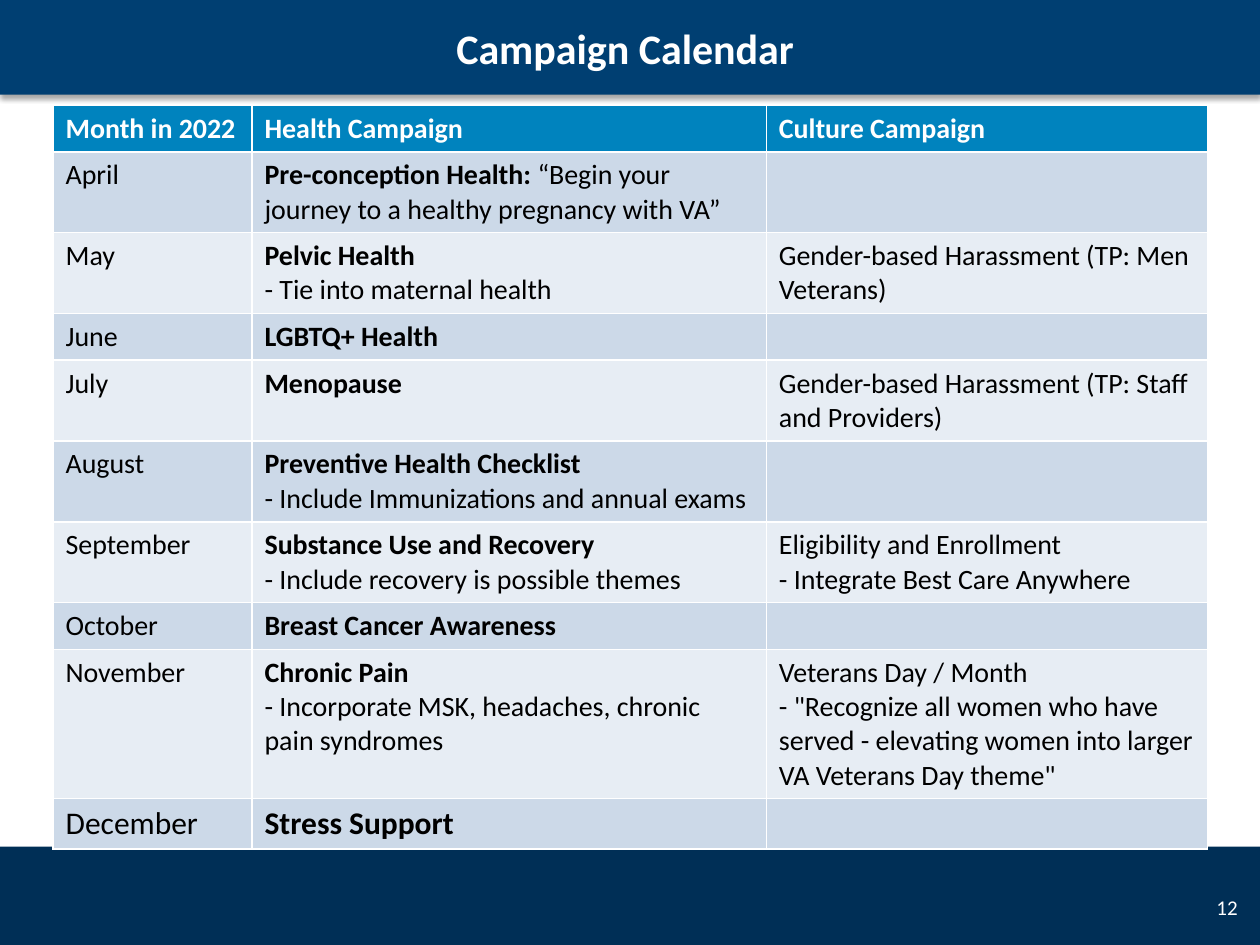
from lxml import etree
from pptx import Presentation
from pptx.dml.color import RGBColor
from pptx.enum.shapes import MSO_SHAPE
from pptx.enum.text import MSO_ANCHOR, PP_ALIGN
from pptx.oxml.ns import qn
from pptx.util import Cm, Pt

RECTANGLE = MSO_SHAPE.RECTANGLE
MIDDLE = MSO_ANCHOR.MIDDLE
CENTER, RIGHT = PP_ALIGN.CENTER, PP_ALIGN.RIGHT

FONT = "Calibri"
COLORS = {
    "title_bar": "003F72",
    "footer": "002F56",
    "header": "0083BE",
    "odd_row": "CCD9E8",
    "even_row": "E7EDF4",
    "white": "FFFFFF",
    "black": "000000",
}

PAGE_WIDTH, PAGE_HEIGHT = 25.4, 19.05
BAR_HEIGHT = 1.91
FOOTER_TOP = 17.07
COLUMN_WIDTHS = [4.01, 10.37, 8.89]
LINE_HEIGHT, CELL_PADDING = 0.69, 0.25

HEADINGS = ["Month in 2022", "Health Campaign", "Culture Campaign"]
# Month, bold campaign name, text after the name on its line,
# note on the next line, culture paragraphs, number of text lines
CAMPAIGNS = [
    ("April", "Pre-conception Health: ",
     "“Begin your journey to a healthy pregnancy with VA”", "", [], 2),
    ("May", "Pelvic Health", "", "- Tie into maternal health",
     ["Gender-based Harassment (TP: Men Veterans)"], 2),
    ("June", "LGBTQ+ Health", "", "", [], 1),
    ("July", "Menopause", "", "",
     ["Gender-based Harassment (TP: Staff and Providers)"], 2),
    ("August", "Preventive Health Checklist", "",
     "- Include Immunizations and annual exams", [], 2),
    ("September", "Substance Use and Recovery", "",
     "- Include recovery is possible themes",
     ["Eligibility and Enrollment", "- Integrate Best Care Anywhere"], 2),
    ("October", "Breast Cancer Awareness", "", "", [], 1),
    ("November", "Chronic Pain", "",
     "- Incorporate MSK, headaches, chronic pain syndromes",
     ["Veterans Day / Month",
      '- "Recognize all women who have served - elevating women into larger '
      'VA Veterans Day theme"'], 4),
    ("December", "Stress Support", "", "", [], 1),
]


def rgb(name):
    return RGBColor.from_string(COLORS[name])


def add_span(para, text, size, color, bold=False):
    span = para.add_run()
    span.text = text
    span.font.name = FONT
    span.font.size = Pt(size)
    span.font.bold = bold
    span.font.color.rgb = rgb(color)


def add_bar(page, top, height, color):
    bar = page.shapes.add_shape(RECTANGLE, 0, Cm(top), Cm(PAGE_WIDTH), Cm(height))
    bar.fill.solid()
    bar.fill.fore_color.rgb = rgb(color)
    bar.line.fill.background()
    bar.shadow.inherit = False
    return bar


def add_drop_shadow(shape):
    effects = shape._element.spPr.find(qn("a:effectLst"))
    shadow = etree.SubElement(
        effects, qn("a:outerShdw"), blurRad=str(Pt(3.1)), dist=str(Pt(1.8)),
        dir="5400000", algn="t", rotWithShape="0")
    color = etree.SubElement(shadow, qn("a:srgbClr"), val=COLORS["black"])
    etree.SubElement(color, qn("a:alpha"), val="35000")


def add_label(page, left, top, width, height, text, size, align, bold=False):
    box = page.shapes.add_textbox(Cm(left), Cm(top), Cm(width), Cm(height))
    box.text_frame.word_wrap = True
    box.text_frame.vertical_anchor = MIDDLE
    para = box.text_frame.paragraphs[0]
    para.alignment = align
    add_span(para, text, size, "white", bold)


def fill_cell(cell, fill, paragraphs, size, color="black"):
    """Write paragraphs, each a list of (text, bold) pairs, on a plain fill."""
    cell.fill.solid()
    cell.fill.fore_color.rgb = rgb(fill)
    frame = cell.text_frame
    for index, spans in enumerate(paragraphs):
        para = frame.add_paragraph() if index else frame.paragraphs[0]
        for text, bold in spans:
            add_span(para, text, size, color, bold)
    if not paragraphs:
        # The size of an empty paragraph keeps its row from growing
        etree.SubElement(frame.paragraphs[0]._p, qn("a:endParaRPr"),
                         sz=str(size * 100))


def add_calendar(page):
    line_counts = [1] + [campaign[-1] for campaign in CAMPAIGNS]
    heights = [count * LINE_HEIGHT + CELL_PADDING for count in line_counts]
    table = page.shapes.add_table(
        len(heights), len(COLUMN_WIDTHS), Cm(1.07), Cm(2.12),
        Cm(sum(COLUMN_WIDTHS)), Cm(sum(heights))).table
    for column, width in zip(table.columns, COLUMN_WIDTHS):
        column.width = Cm(width)
    for row, height in zip(table.rows, heights):
        row.height = Cm(height)

    for column, heading in enumerate(HEADINGS):
        fill_cell(table.cell(0, column), "header", [[(heading, True)]], 16, "white")
    for row, campaign in enumerate(CAMPAIGNS, start=1):
        month, name, rest, note, culture, _ = campaign
        fill = "odd_row" if row % 2 else "even_row"
        size = 18 if month == "December" else 16
        health = [[(name, True)]]
        if rest:
            health[0].append((rest, False))
        if note:
            health.append([(note, False)])
        contents = [[[(month, False)]], health, [[(line, False)] for line in culture]]
        for column, paragraphs in enumerate(contents):
            fill_cell(table.cell(row, column), fill, paragraphs, size)


def main():
    deck = Presentation()
    deck.slide_width, deck.slide_height = Cm(PAGE_WIDTH), Cm(PAGE_HEIGHT)
    page = deck.slides.add_slide(deck.slide_layouts[6])

    add_bar(page, FOOTER_TOP, PAGE_HEIGHT - FOOTER_TOP, "footer")
    add_drop_shadow(add_bar(page, 0, BAR_HEIGHT, "title_bar"))
    add_label(page, 0, 0, PAGE_WIDTH, BAR_HEIGHT, "Campaign Calendar ", 24, CENTER, True)
    add_calendar(page)
    add_label(page, 19.28, 17.78, 5.92, 1.02, "12", 12, RIGHT)

    deck.save("out.pptx")


if __name__ == "__main__":
    main()
